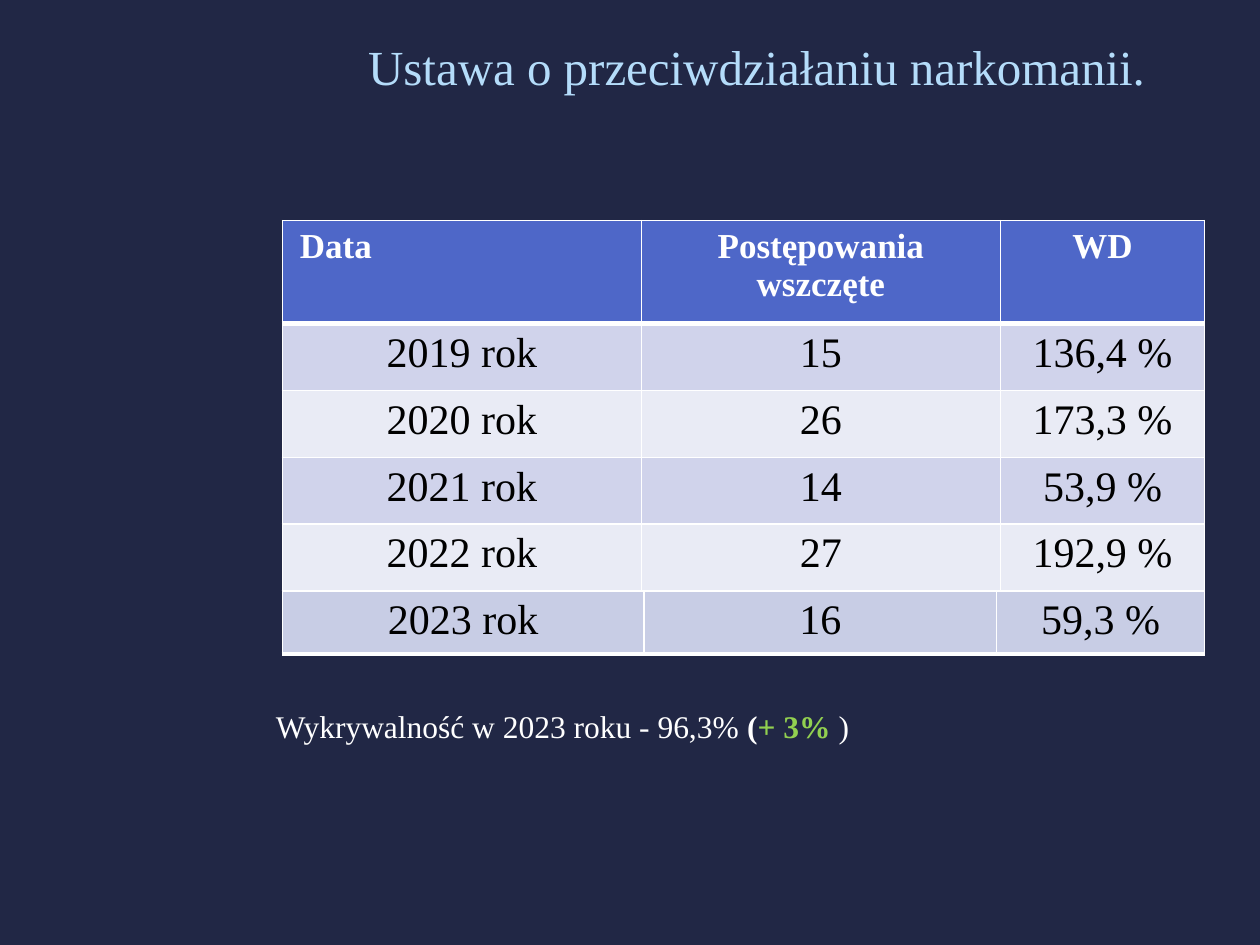
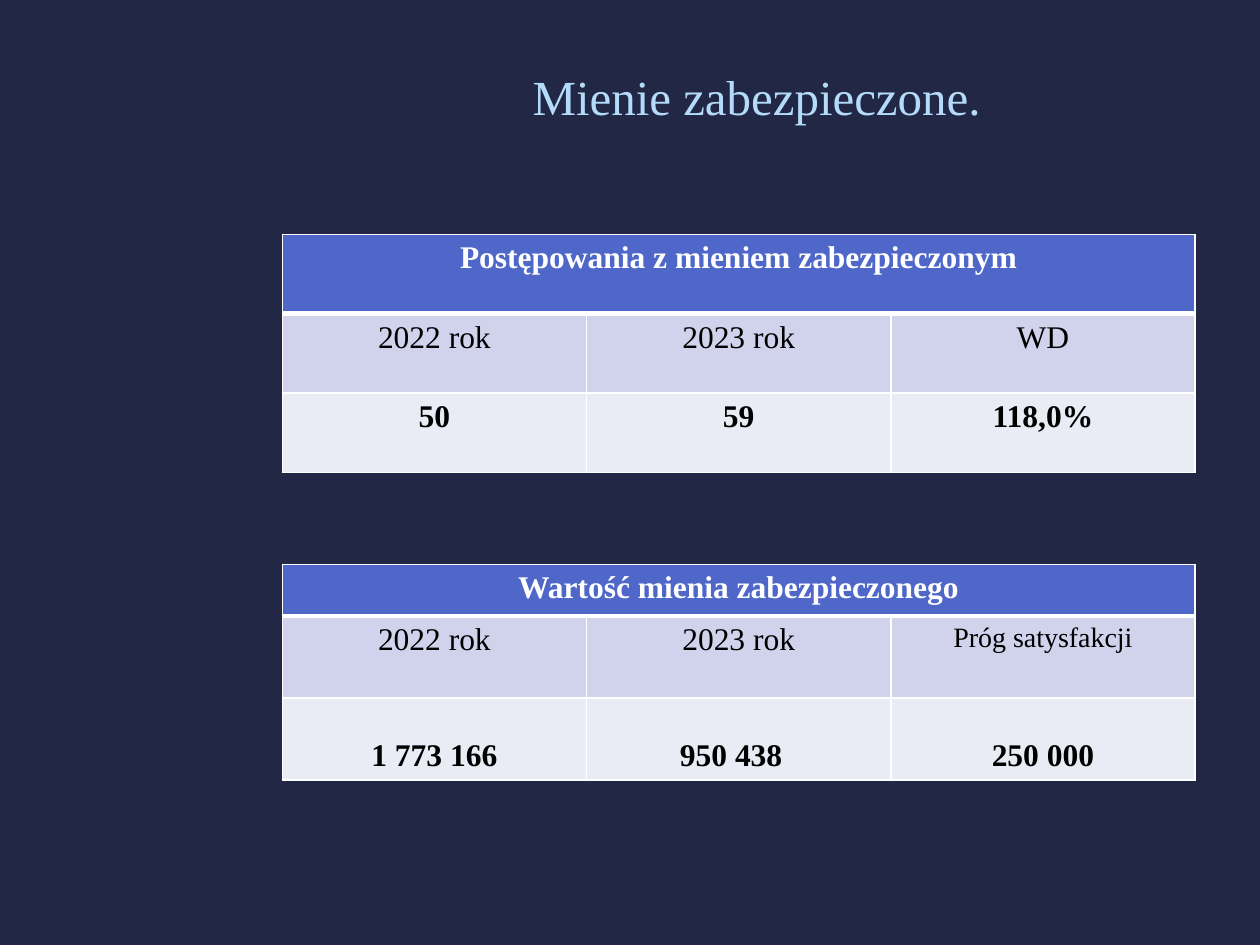
from dataclasses import dataclass

import lxml.etree
import pptx
import pptx.dml.color
import pptx.enum.text
import pptx.oxml.ns
import pptx.slide
import pptx.table
import pptx.text.text
import pptx.util

Inches = pptx.util.Inches
Align = pptx.enum.text.PP_ALIGN
Anchor = pptx.enum.text.MSO_ANCHOR

FONT = "Times New Roman"
NAVY, SKY, BLUE = "212745", "B4DCFA", "4E67C8"
DARK, LIGHT, LAST = "D0D3EB", "E9EBF5", "C8CDE5"
WHITE, BLACK, GREEN = "FFFFFF", "000000", "92D050"
LEFT = 2.24


@dataclass
class Cell:
    text: str
    size: float | None = None
    align: Align = Align.CENTER
    left: float = 0.1
    right: float = 0.1


@dataclass
class Row:
    height: float
    fill: str
    cells: list[Cell]
    size: float
    ink: str = BLACK
    bold: bool = False
    anchor: Anchor = Anchor.TOP


@dataclass
class Grid:
    top: float
    widths: list[float]
    rows: list[Row]


def tint(code: str) -> pptx.dml.color.RGBColor:
    return pptx.dml.color.RGBColor.from_string(code)


def write(para: pptx.text.text._Paragraph, text: str, *, size: float,
          ink: str, bold: bool = False, align: Align = Align.LEFT) -> None:
    """Add one formatted run to a paragraph."""
    para.alignment = align
    run = para.add_run()
    run.text = text
    font = run.font
    font.name, font.size, font.bold = FONT, pptx.util.Pt(size), bold
    font.color.rgb = tint(ink)


def edge(cell: pptx.table._Cell, row: int) -> None:
    """Draw white borders, with a heavy rule under the first row."""
    props = cell._tc.get_or_add_tcPr()
    widths = {"L": 1, "R": 1, "T": 3 if row == 1 else 1, "B": 3 if row == 0 else 1}
    for side, width in widths.items():
        line = lxml.etree.SubElement(props, pptx.oxml.ns.qn(f"a:ln{side}"),
                                     w=str(pptx.util.Pt(width)))
        solid = lxml.etree.SubElement(line, pptx.oxml.ns.qn("a:solidFill"))
        lxml.etree.SubElement(solid, pptx.oxml.ns.qn("a:srgbClr"), val=WHITE)


def draw(slide: pptx.slide.Slide, grid: Grid) -> None:
    """Draw a table; a row with a single cell is merged across."""
    high = sum(row.height for row in grid.rows)
    table = slide.shapes.add_table(
        len(grid.rows), len(grid.widths), Inches(LEFT), Inches(grid.top),
        Inches(sum(grid.widths)), Inches(high)).table
    for col, width in zip(table.columns, grid.widths):
        col.width = Inches(width)
    for at, row in enumerate(grid.rows):
        table.rows[at].height = Inches(row.height)
        slots = list(table.rows[at].cells)
        for slot in slots:
            edge(slot, at)
            slot.fill.solid()
            slot.fill.fore_color.rgb = tint(row.fill)
        if len(row.cells) < len(slots):
            slots[0].merge(slots[-1])
        for slot, item in zip(slots, row.cells):
            slot.vertical_anchor = row.anchor
            slot.margin_left = Inches(item.left)
            slot.margin_right = Inches(item.right)
            frame = slot.text_frame
            for num, text in enumerate(item.text.split("\n")):
                para = frame.add_paragraph() if num else frame.paragraphs[0]
                write(para, text, size=item.size or row.size, ink=row.ink,
                      bold=row.bold, align=item.align)


def box(slide: pptx.slide.Slide, left: float, top: float, width: float,
        height: float) -> pptx.text.text.TextFrame:
    frame = slide.shapes.add_textbox(Inches(left), Inches(top), Inches(width),
                                     Inches(height)).text_frame
    frame.word_wrap = True
    return frame


def start(deck: pptx.presentation.Presentation, title: str,
          inset: float = 0.05) -> pptx.slide.Slide:
    """Add a slide with the shared background and title; inset lifts the title."""
    slide = deck.slides.add_slide(deck.slide_layouts[6])
    slide.background.fill.solid()
    slide.background.fill.fore_color.rgb = tint(NAVY)
    frame = box(slide, 2.01, 0.21, 7.99, 1.1)
    frame.vertical_anchor = Anchor.MIDDLE
    frame.margin_bottom = Inches(inset)
    write(frame.paragraphs[0], title, size=28, ink=SKY, align=Align.CENTER)
    return slide


def drugs(deck: pptx.presentation.Presentation) -> None:
    slide = start(deck, "Ustawa o przeciwdziałaniu narkomanii.", inset=0.53)
    head = Row(0.82, BLUE, [Cell("Data", align=Align.LEFT, left=0.14),
                            Cell("Postępowania\nwszczęte"), Cell("WD")],
               size=20, ink=WHITE, bold=True)
    years = [("2019 rok", "15", "136,4 %"), ("2020 rok", "26", "173,3 %"),
             ("2021 rok", "14", "53,9 %"), ("2022 rok", "27", "192,9 %")]
    body = [Row(0.53, LIGHT if num % 2 else DARK, [Cell(text) for text in year], 24)
            for num, year in enumerate(years)]
    draw(slide, Grid(1.75, [2.85, 2.85, 1.62], [head, *body]))
    last = Row(0.47, LAST, [Cell("2023 rok"), Cell("16"), Cell("59,3 %")], 24)
    draw(slide, Grid(4.69, [2.87, 2.8, 1.65], [last]))
    para = box(slide, 2.09, 5.56, 7.48, 0.4).paragraphs[0]
    for text, ink, bold in [("Wykrywalność w 2023 roku - 96,3% ", WHITE, False),
                            ("(", WHITE, True), ("+ 3% ", GREEN, True),
                            (")", WHITE, False)]:
        write(para, text, size=18, ink=ink, bold=bold)


def assets(deck: pptx.presentation.Presentation) -> None:
    slide = start(deck, "Mienie zabezpieczone.")

    def block(top: float, title: str, third: Cell, sums: list[Cell],
              heights: list[float], anchor: Anchor = Anchor.TOP) -> None:
        names = [Cell("2022 rok"), Cell("2023 rok"), third]
        draw(slide, Grid(top, [2.415] * 3, [
            Row(heights[0], BLUE, [Cell(title)], 18, WHITE, True),
            Row(heights[1], DARK, names, 18),
            Row(heights[2], LIGHT, sums, 18, bold=True, anchor=anchor)]))

    block(1.86, "Postępowania z mieniem zabezpieczonym", Cell("WD"),
          [Cell("50"), Cell("59"), Cell("118,0%")], [0.63] * 3)
    block(4.48, "Wartość mienia zabezpieczonego", Cell("Próg satysfakcji", 16),
          [Cell("1 773 166"), Cell("950 438", right=0.22), Cell("250 000")],
          [0.41, 0.65, 0.65], Anchor.BOTTOM)


def main() -> None:
    deck = pptx.Presentation()
    deck.slide_width, deck.slide_height = Inches(10), Inches(7.5)
    drugs(deck)
    assets(deck)
    deck.save("out.pptx")


if __name__ == "__main__":
    main()
